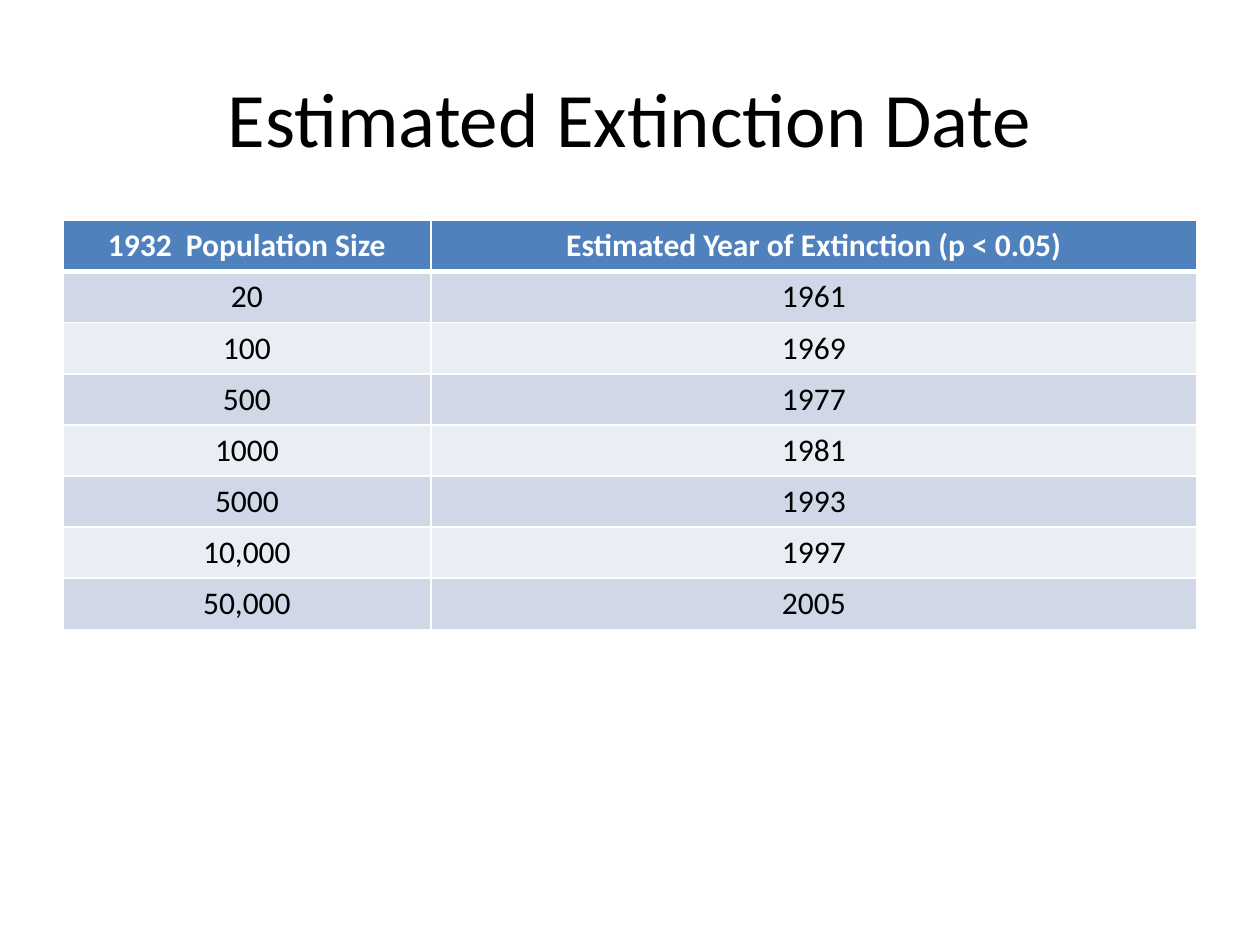
"""Build a slide with a table of estimated extinction dates by population size."""
from dataclasses import dataclass

from lxml import etree
from pptx import Presentation
from pptx.dml.color import RGBColor
from pptx.enum.text import MSO_ANCHOR, PP_ALIGN
from pptx.oxml.ns import qn
from pptx.util import Inches, Pt

CENTER = PP_ALIGN.CENTER
MIDDLE = MSO_ANCHOR.MIDDLE
TITLE_ONLY = 5
COLORS = {
    "black": "000000",
    "white": "FFFFFF",
    "header": "4F81BD",
    "odd": "D0D8E8",
    "even": "E9EDF4",
}
TITLE_FORMAT = {"name": "Calibri", "size": Pt(44), "bold": False}
HEADER_FORMAT = {"name": "Calibri", "size": Pt(18), "bold": True}
BODY_FORMAT = {**HEADER_FORMAT, "bold": False}
COLUMN_WIDTHS = (2.92, 6.08)


@dataclass(frozen=True)
class Estimate:
    population: str
    year: str


HEADER = Estimate("1932  Population Size", "Estimated Year of Extinction (p < 0.05)")
ESTIMATES = [
    Estimate("20", "1961"),
    Estimate("100", "1969"),
    Estimate("500", "1977"),
    Estimate("1000", "1981"),
    Estimate("5000", "1993"),
    Estimate("10,000", "1997"),
    Estimate("50,000", "2005"),
]


def format_text(para, values: dict, color: str) -> None:
    para.alignment = CENTER
    for name, value in values.items():
        setattr(para.font, name, value)
    para.font.color.rgb = RGBColor.from_string(COLORS[color])


def add_borders(cell, widths: dict[str, float]) -> None:
    properties = cell._tc.get_or_add_tcPr()
    for side, width in widths.items():
        line = etree.SubElement(properties, qn(f"a:ln{side}"), w=str(Pt(width)))
        fill = etree.SubElement(line, qn("a:solidFill"))
        etree.SubElement(fill, qn("a:srgbClr"), val=COLORS["white"])


def add_title(page, text: str) -> None:
    title = page.shapes.title
    title.left, title.top = Inches(0.5), Inches(0.3)
    title.width, title.height = Inches(9), Inches(1.25)
    title.text_frame.text = text
    title.text_frame.vertical_anchor = MIDDLE
    format_text(title.text_frame.paragraphs[0], TITLE_FORMAT, "black")


def fill_row(table, index: int, estimate: Estimate) -> None:
    is_header = index == 0
    fill = "header" if is_header else "odd" if index % 2 else "even"
    values, color = (HEADER_FORMAT, "white") if is_header else (BODY_FORMAT, "black")
    borders = {"L": 1, "R": 1, "T": 3 if index == 1 else 1, "B": 3 if is_header else 1}
    for column, text in enumerate((estimate.population, estimate.year)):
        cell = table.cell(index, column)
        cell.text = text
        add_borders(cell, borders)
        cell.fill.solid()
        cell.fill.fore_color.rgb = RGBColor.from_string(COLORS[fill])
        format_text(cell.text_frame.paragraphs[0], values, color)


def add_estimates(page, estimates: list[Estimate]) -> None:
    frame = page.shapes.add_table(
        len(estimates) + 1, len(COLUMN_WIDTHS),
        Inches(0.5), Inches(1.75), Inches(9), Inches(3.24),
    )
    for column, width in zip(frame.table.columns, COLUMN_WIDTHS):
        column.width = Inches(width)
    for index, estimate in enumerate([HEADER, *estimates]):
        fill_row(frame.table, index, estimate)


def main() -> None:
    deck = Presentation()
    deck.slide_width, deck.slide_height = Inches(10), Inches(7.5)
    page = deck.slides.add_slide(deck.slide_layouts[TITLE_ONLY])
    add_title(page, "Estimated Extinction Date")
    add_estimates(page, ESTIMATES)
    deck.save("out.pptx")


if __name__ == "__main__":
    main()
